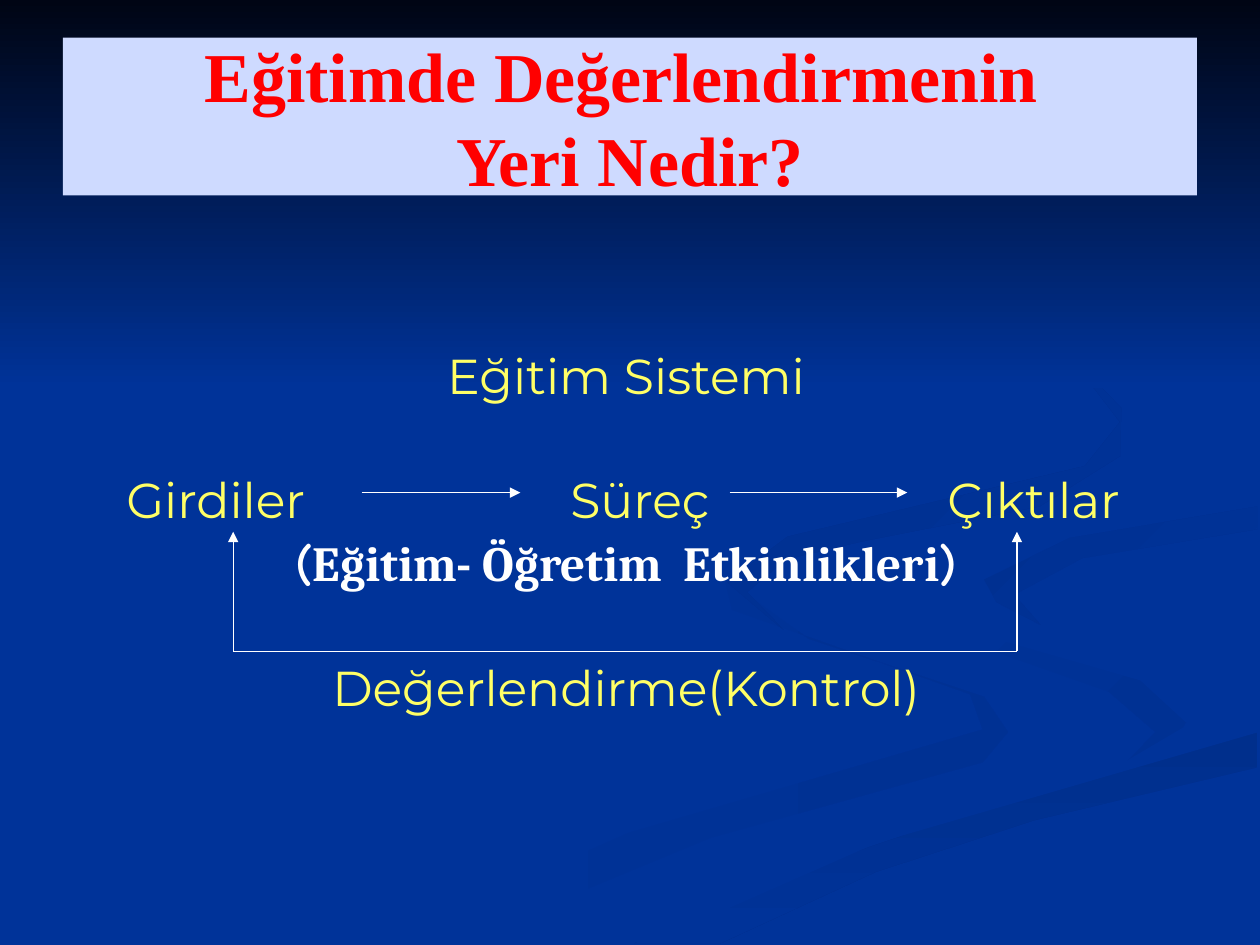
from dataclasses import dataclass
from typing import Optional

from lxml import etree
from pptx import Presentation
from pptx import util as u
from pptx.dml.color import RGBColor
from pptx.enum import shapes, text
from pptx.oxml.ns import qn

NAVY = RGBColor(0x00, 0x33, 0x99)
NIGHT = RGBColor(0x00, 0x05, 0x14)
SHADE = RGBColor(0x00, 0x31, 0x93)
DUSK = RGBColor(0x00, 0x2F, 0x8C)
DEEP = RGBColor(0x00, 0x30, 0x91)
DARK = RGBColor(0x00, 0x2F, 0x8E)
PALE = RGBColor(0xCE, 0xDA, 0xFF)
RED = RGBColor(0xFF, 0x00, 0x00)
GOLD = RGBColor(0xFF, 0xFF, 0x66)
WHITE = RGBColor(0xFF, 0xFF, 0xFF)

GRID = u.Cm(2.54) / 100


@dataclass
class Swirl:
    start: RGBColor
    end: RGBColor
    angle: int
    points: list[tuple[int, int]]


@dataclass
class Run:
    words: str
    font: str = "Montserrat"
    color: RGBColor = GOLD
    bold: bool = False
    size: int = 28


@dataclass
class Row:
    runs: list[Run]
    gap: float = 0
    stops: tuple[float, ...] = ()


@dataclass
class Line:
    x1: float
    y1: float
    x2: float
    y2: float
    arrow: bool = True


SWIRLS = [
    Swirl(NAVY, SHADE, 0, [
        (781, 553), (642, 507), (575, 459), (581, 484), (770, 551), (780, 579),
        (499, 661), (300, 749), (361, 749), (564, 665), (780, 605), (800, 581)]),
    Swirl(NAVY, SHADE, 315, [
        (943, 570), (905, 540), (758, 498), (724, 464), (755, 505), (880, 549),
        (917, 581), (894, 605), (932, 589)]),
    Swirl(DUSK, NAVY, 270, [
        (503, 749), (571, 749), (695, 692), (821, 651), (998, 609), (998, 581),
        (764, 647), (630, 693)]),
    Swirl(NAVY, NAVY, 0, [
        (725, 464), (759, 498), (905, 540), (943, 575), (892, 605), (704, 655),
        (477, 749), (519, 747), (696, 669), (999, 581), (999, 538), (848, 503),
        (781, 463), (835, 430), (999, 402), (999, 387), (755, 432)]),
    Swirl(DEEP, NAVY, 315, [
        (781, 460), (791, 478), (826, 496), (805, 472), (859, 443), (998, 420),
        (998, 402), (849, 427)]),
    Swirl(DARK, NAVY, 315, [
        (683, 430), (825, 402), (889, 362), (890, 324), (843, 275), (762, 233),
        (846, 279), (889, 335), (861, 370), (625, 426), (577, 462), (622, 500),
        (593, 470), (624, 444)]),
    Swirl(NIGHT, NAVY, 270, [(0, 0), (0, 308), (1000, 308), (1000, 0)]),
]

HEAD = [Run(words, "Times New Roman", RED, True, 40)
        for words in ("Eğitimde Değerlendirmenin ", "Yeri Nedir?")]

ROWS = [
    Row([Run("Eğitim Sistemi")]),
    Row([Run("\tGirdiler\tSüreç\tÇıktılar")], 41, (0.6, 9.55, 17.15)),
    Row([Run("(", "Comic Neue", WHITE, True),
         Run("Eğitim- Öğretim  Etkinlikleri", "Cambria", WHITE, True),
         Run(")", "Comic Neue", WHITE, True)], 5.6),
    Row([Run("Değerlendirme(Kontrol)")], 41),
]

LEFT, RIGHT, BASE, TIP, FLOW = 4.7, 20.5, 13.13, 10.72, 9.93
LINES = [
    Line(LEFT, BASE, RIGHT, BASE, False),
    Line(7.29, FLOW, 10.49, FLOW),
    Line(14.71, FLOW, 18.29, FLOW),
    Line(RIGHT, BASE, RIGHT, TIP),
    Line(LEFT, BASE, LEFT, TIP),
]


def draw_swirl(slide, swirl: Swirl) -> None:
    first, *rest = swirl.points
    pen = slide.shapes.build_freeform(*first, scale=GRID)
    pen.add_line_segments(rest, close=True)
    shape = pen.convert_to_shape()
    shape.shadow.inherit = False
    shape.line.fill.background()
    if swirl.start == swirl.end:
        shape.fill.solid()
        shape.fill.fore_color.rgb = swirl.start
        return
    shape.fill.gradient()
    shape.fill.gradient_angle = swirl.angle
    for place, color in enumerate((swirl.start, swirl.end)):
        stop = shape.fill.gradient_stops[place]
        stop.color.rgb = color
        stop.position = place


def add_run(para, run: Run) -> None:
    part = para.add_run()
    part.text = run.words
    font = part.font
    font.name, font.size, font.bold = run.font, u.Pt(run.size), run.bold
    font.color.rgb = run.color


def draw_head(slide) -> None:
    box = slide.shapes.add_shape(shapes.MSO_SHAPE.RECTANGLE,
                                 u.Cm(1.27), u.Cm(0.76), u.Cm(22.86), u.Cm(3.18))
    box.shadow.inherit = False
    box.line.fill.background()
    box.fill.solid()
    box.fill.fore_color.rgb = PALE
    frame = box.text_frame
    frame.vertical_anchor = text.MSO_ANCHOR.MIDDLE
    para = frame.paragraphs[0]
    para.alignment = text.PP_ALIGN.CENTER
    add_run(para, HEAD[0])
    para.add_line_break()
    add_run(para, HEAD[1])


def add_row(para, row: Row) -> None:
    para.alignment = text.PP_ALIGN.LEFT if row.stops else text.PP_ALIGN.CENTER
    para.line_spacing = 0.9
    para.space_before = u.Pt(row.gap)
    if row.stops:
        tabs = etree.SubElement(para._p.get_or_add_pPr(), qn("a:tabLst"))
        for stop in row.stops:
            etree.SubElement(tabs, qn("a:tab"), pos=str(u.Cm(stop)), algn="l")
    for run in row.runs:
        add_run(para, run)


def draw_body(slide) -> None:
    box = slide.shapes.add_textbox(u.Cm(1.7), u.Cm(5.54), u.Cm(21.84), u.Cm(9.45))
    frame = box.text_frame
    frame.word_wrap = True
    frame.margin_top = u.Cm(1.55)
    para: Optional[object] = frame.paragraphs[0]
    for row in ROWS:
        add_row(para or frame.add_paragraph(), row)
        para = None


def draw_line(slide, line: Line) -> None:
    ends = (u.Cm(n) for n in (line.x1, line.y1, line.x2, line.y2))
    link = slide.shapes.add_connector(shapes.MSO_CONNECTOR.STRAIGHT, *ends)
    link.line.color.rgb = WHITE
    link.line.width = u.Pt(0.75)
    props = link._element.spPr
    if line.arrow:
        etree.SubElement(props.find(qn("a:ln")), qn("a:tailEnd"), type="triangle")
    etree.SubElement(props, qn("a:effectLst"))


def main() -> None:
    deck = Presentation()
    deck.slide_width, deck.slide_height = u.Cm(25.4), u.Cm(19.05)
    slide = deck.slides.add_slide(deck.slide_layouts[6])
    slide.background.fill.solid()
    slide.background.fill.fore_color.rgb = NAVY
    for swirl in SWIRLS:
        draw_swirl(slide, swirl)
    draw_head(slide)
    draw_body(slide)
    for line in LINES:
        draw_line(slide, line)
    deck.save("out.pptx")


if __name__ == "__main__":
    main()
